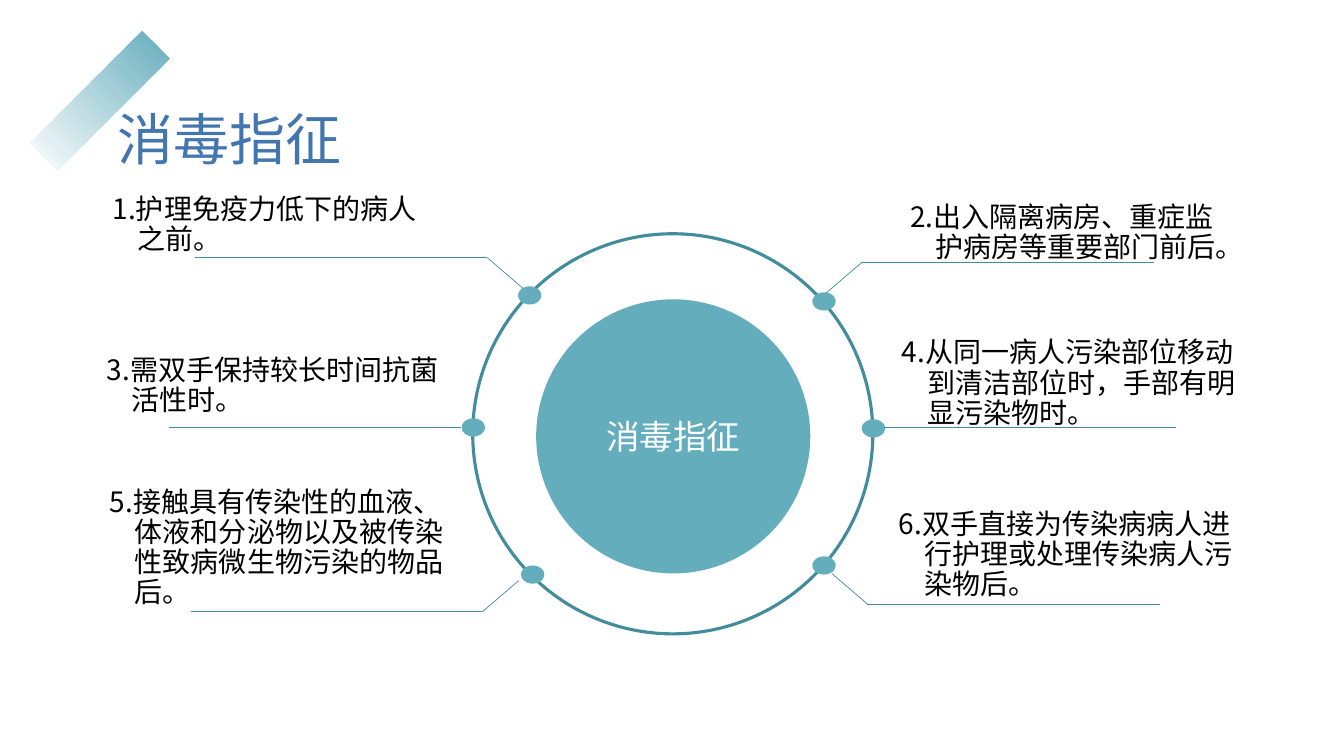
"""Builds a slide of six disinfection indications around a central ring."""
from lxml.etree import SubElement
from pptx import Presentation
from pptx.dml.color import RGBColor
from pptx.enum.shapes import MSO_CONNECTOR, MSO_SHAPE
from pptx.enum.text import MSO_ANCHOR, MSO_AUTO_SIZE, PP_ALIGN
from pptx.oxml.ns import qn
from pptx.util import Pt

FONT = "Noto Sans CJK SC"
COLORS = {"title": "4375AF", "text": "000000", "white": "FFFFFF",
          "teal": "64ADBC", "line": "438C9B"}
SHELF, SLANT_X, SLANT_Y = 208.5, 26, 22.3
DOT_W, DOT_H = 16.6, 13

# text, text box, dot corner, leader start, direction to the ring, slant
ITEMS = [
    ("1.护理免疫力低下的病人之前。",
     (73.4, 136.1, 249.8, 51.1), (370.1, 204.5), (139, 183.6), 1, 1),
    ("2.出入隔离病房、重症监护病房等重要部门前后。",
     (643, 141.8, 241.9, 51.1), (580.3, 208.8), (824.4, 187.2), -1, 1),
    ("3.需双手保持较长时间抗菌活性时。",
     (69.1, 250.6, 263.5, 51.1), (329.8, 298.8), (121, 305.3), 1, 0),
    ("4.从同一病人污染部位移动到清洁部位时，手部有明显污染物时。",
     (637.2, 238.3, 254.2, 72.7), (615.6, 299.5), (840.2, 305.3), -1, 0),
    ("5.接触具有传染性的血液、体液和分泌物以及被传染性致病微生物污染的物品后。",
     (71.3, 344.9, 269.3, 94.3), (372.2, 403.9), (136.1, 437), 1, -1),
    ("6.双手直接为传染病病人进行护理或处理传染病人污染物后。",
     (635, 360.7, 256.3, 72), (580.3, 397.4), (828.7, 432), -1, -1),
]


def rgb(name):
    return RGBColor.from_string(COLORS[name])


def write(tf, text, size, color, align=PP_ALIGN.LEFT, spacing=None):
    tf.word_wrap = True
    p = tf.paragraphs[0]
    p.text = text
    p.alignment = align
    p.line_spacing = spacing
    p.font.size = Pt(size)
    p.font.name = FONT
    p.font.color.rgb = rgb(color)
    SubElement(p.font._element, qn("a:ea"), typeface=FONT)
    return p


def add_title(s, text):
    sp = s.shapes.title
    sp.left, sp.top, sp.width, sp.height = map(Pt, (77, 49.7, 828, 104.4))
    tf = sp.text_frame
    tf.auto_size = MSO_AUTO_SIZE.NONE
    tf.vertical_anchor = MSO_ANCHOR.MIDDLE
    write(tf, text, 40, "title", spacing=0.9)


def add_shape(s, kind, box, fill=None, line=None):
    sp = s.shapes.add_shape(kind, *map(Pt, box))
    sp.shadow.inherit = False
    if fill:
        sp.fill.solid()
        sp.fill.fore_color.rgb = rgb(fill)
    else:
        sp.fill.background()
    if line:
        sp.line.color.rgb = rgb(line)
        sp.line.width = Pt(2.25)
    else:
        sp.line.fill.background()
    return sp


def add_label(s, text, box):
    tf = s.shapes.add_textbox(*map(Pt, box)).text_frame
    tf.auto_size = MSO_AUTO_SIZE.SHAPE_TO_FIT_TEXT
    p = write(tf, text, 20, "text", spacing=0.9)
    p.space_before = Pt(10)
    pPr = p._p.get_or_add_pPr()
    pPr.set("marL", str(Pt(18)))
    pPr.set("indent", str(-Pt(18)))


def add_line(s, start, end):
    ln = s.shapes.add_connector(MSO_CONNECTOR.STRAIGHT, *map(Pt, start + end))
    ln.line.color.rgb = rgb("line")
    ln.line.width = Pt(0.5)
    SubElement(ln._element.spPr, qn("a:effectLst"))


def add_leader(s, start, direction, slant):
    x, y = start
    elbow = (x + direction * SHELF, y)
    add_line(s, start, elbow)
    if slant:
        add_line(s, elbow, (elbow[0] + direction * SLANT_X, y + slant * SLANT_Y))


def add_ribbon(s):
    sp = add_shape(s, MSO_SHAPE.RECTANGLE, (14.4, 57.6, 113, 28.1))
    sp.rotation = 315
    sp.fill.gradient()
    sp.fill.gradient_angle = 0
    for stop in sp.fill.gradient_stops:
        stop.color.rgb = rgb("teal")
    first = sp._element.spPr.find(".//" + qn("a:srgbClr"))
    SubElement(first, qn("a:alpha"), val="0")


def main():
    prs = Presentation()
    prs.slide_width, prs.slide_height = Pt(960), Pt(540)
    s = prs.slides.add_slide(prs.slide_layouts[5])
    add_title(s, "消毒指征")
    add_shape(s, MSO_SHAPE.OVAL, (337.7, 167, 285.8, 285.8), line="line")
    core = add_shape(s, MSO_SHAPE.OVAL, (383, 213.8, 195.8, 195.8), fill="teal")
    core.text_frame.vertical_anchor = MSO_ANCHOR.MIDDLE
    write(core.text_frame, "消毒指征", 24, "white", PP_ALIGN.CENTER)
    for text, box, dot, start, direction, slant in ITEMS:
        add_label(s, text, box)
        add_shape(s, MSO_SHAPE.OVAL, dot + (DOT_W, DOT_H), fill="teal")
        add_leader(s, start, direction, slant)
    add_ribbon(s)
    prs.save("out.pptx")


if __name__ == "__main__":
    main()
